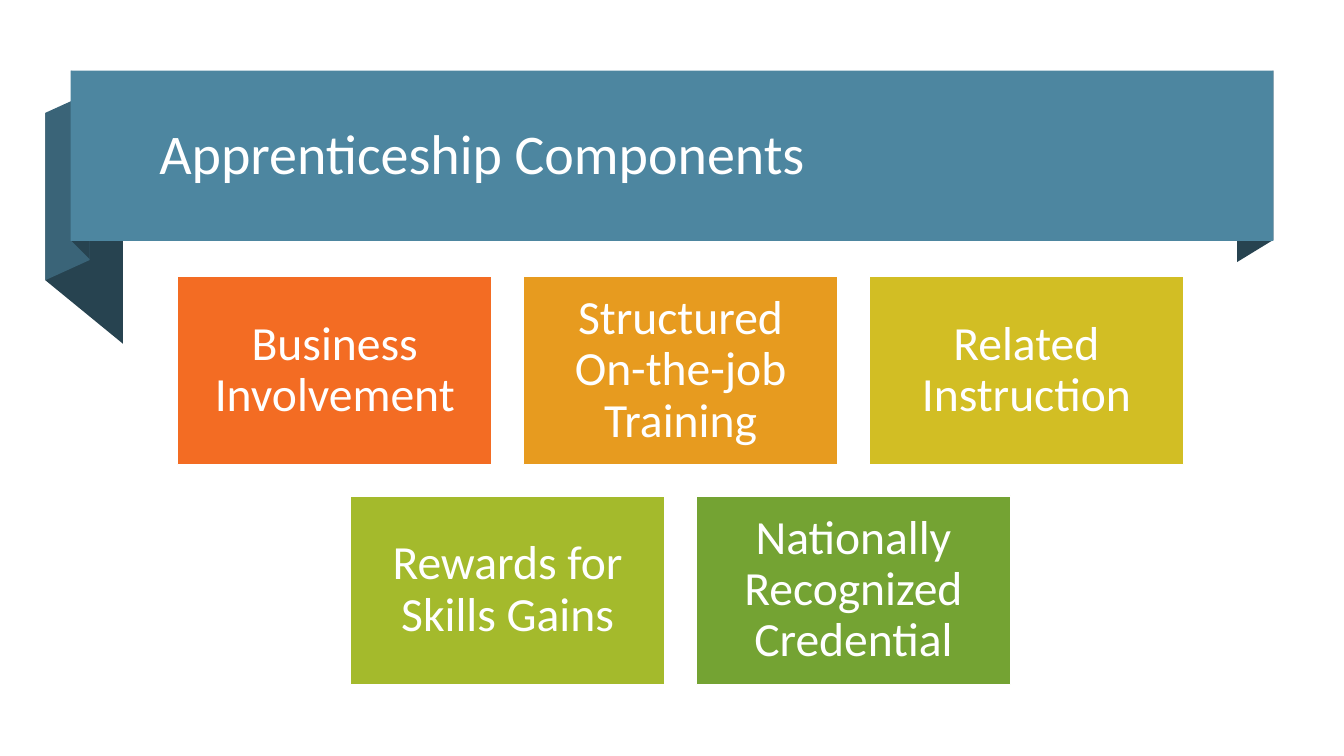
from pptx import Presentation
from pptx.dml.color import RGBColor
from pptx.enum.shapes import MSO_SHAPE
from pptx.enum.text import MSO_ANCHOR, MSO_AUTO_SIZE, PP_ALIGN
from pptx.util import Inches, Pt

COLOURS = {
    "white": "FFFFFF",
    "banner": "4D86A0",
    "fold": "3A6478",
    "shade": "274350",
    "orange": "F36C23",
    "amber": "E79B1F",
    "yellow": "D2BE24",
    "lime": "A4BA2C",
    "green": "74A333",
}
FONT = "Calibri"

RIBBON_FOLDS = [
    ("shade", [(12.63, 2.38), (12.27, 2.6), (12.27, 0.91), (12.63, 0.7)]),
    ("shade", [(1.22, 3.41), (0.45, 2.78), (0.45, 1.12), (1.22, 1.75)]),
    ("fold", [(0.89, 2.58), (0.45, 2.78), (0.45, 1.12), (0.89, 0.92)]),
    ("shade", [(0.89, 2.57), (0.71, 2.39), (0.71, 0.7), (0.89, 0.89)]),
]

COMPONENT_ROWS = [
    [
        ("Business Involvement", "orange"),
        ("Structured On-the-job Training", "amber"),
        ("Related Instruction", "yellow"),
    ],
    [
        ("Rewards for Skills Gains", "lime"),
        ("Nationally Recognized Credential", "green"),
    ],
]
BOX_WIDTH, BOX_HEIGHT, BOX_GAP = 3.12, 1.87, 0.31
ROWS_CENTRE, ROWS_TOP = 6.75, 2.74


def colour(name):
    return RGBColor.from_string(COLOURS[name])


def paint(shape, fill, line=None):
    shape.shadow.inherit = False
    shape.fill.solid()
    shape.fill.fore_color.rgb = colour(fill)
    if line:
        shape.line.color.rgb = colour(line)
        shape.line.width = Pt(1)
    else:
        shape.line.fill.background()


def write(shape, text, size, align, margins):
    frame = shape.text_frame
    frame_format = {
        "text": text,
        "word_wrap": True,
        "auto_size": MSO_AUTO_SIZE.NONE,
        "vertical_anchor": MSO_ANCHOR.MIDDLE,
        **margins,
    }
    for name, value in frame_format.items():
        setattr(frame, name, value)
    para = frame.paragraphs[0]
    para.alignment = align
    para.line_spacing = 0.9
    span = para.runs[0]
    for name, value in {"name": FONT, "size": Pt(size)}.items():
        setattr(span.font, name, value)
    span.font.color.rgb = colour("white")


def add_rectangle(page, left, top, width, height, fill, line=None):
    box = page.shapes.add_shape(
        MSO_SHAPE.RECTANGLE, Inches(left), Inches(top), Inches(width), Inches(height)
    )
    paint(box, fill, line)
    return box


def add_fold(page, fill, corners):
    start, *others = [(Inches(x), Inches(y)) for x, y in corners]
    builder = page.shapes.build_freeform(*start)
    builder.add_line_segments(others, close=True)
    paint(builder.convert_to_shape(), fill)


def add_title(page, text):
    """Place the title placeholder in front of the banner."""
    title = page.shapes.title
    place = {"left": 1.48, "top": 0.83, "width": 10.94, "height": 1.45}
    for name, value in place.items():
        setattr(title, name, Inches(value))
    margins = {"margin_left": Inches(0.1), "margin_right": Inches(0.1)}
    write(title, text, 40, PP_ALIGN.LEFT, margins)
    title.element.getparent().append(title.element)


def add_component_row(page, top, components):
    """Add one row of boxes, centred as a group."""
    pitch = BOX_WIDTH + BOX_GAP
    first_left = ROWS_CENTRE - (len(components) * pitch - BOX_GAP) / 2
    margins = {
        f"margin_{side}": Inches(0.14) for side in ("left", "top", "right", "bottom")
    }
    for column, (text, fill) in enumerate(components):
        left = first_left + column * pitch
        box = add_rectangle(page, left, top, BOX_WIDTH, BOX_HEIGHT, fill, "white")
        write(box, text, 34, PP_ALIGN.CENTER, margins)


def main():
    deck = Presentation()
    deck.slide_width, deck.slide_height = Inches(13.33), Inches(7.5)
    page = deck.slides.add_slide(deck.slide_layouts.get_by_name("Title Only"))
    for fill, corners in RIBBON_FOLDS:
        add_fold(page, fill, corners)
    add_rectangle(page, 0.7, 0.7, 11.93, 1.69, "banner")
    add_title(page, "Apprenticeship Components")
    for row, components in enumerate(COMPONENT_ROWS):
        add_component_row(page, ROWS_TOP + row * (BOX_HEIGHT + BOX_GAP), components)
    deck.save("out.pptx")


if __name__ == "__main__":
    main()
